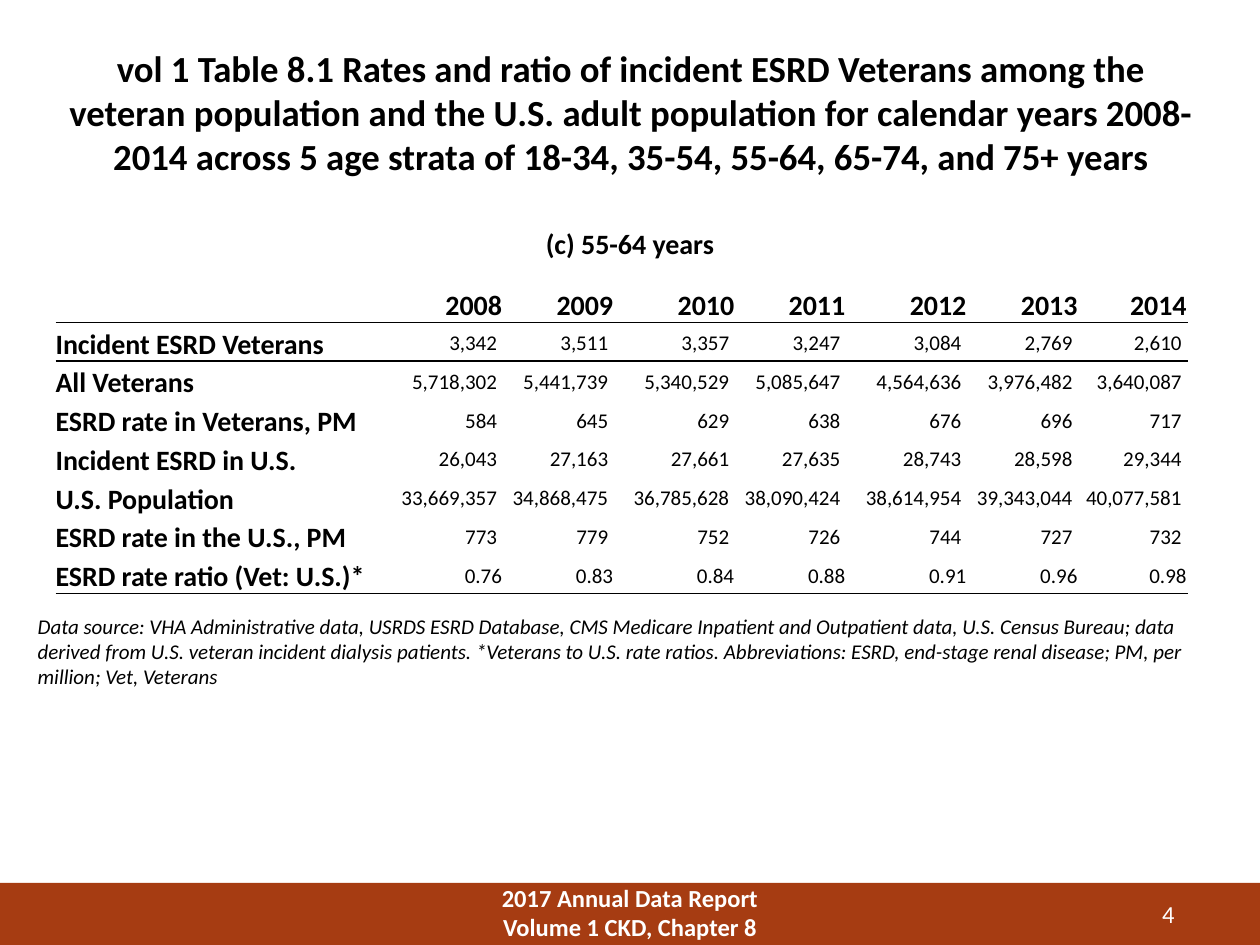
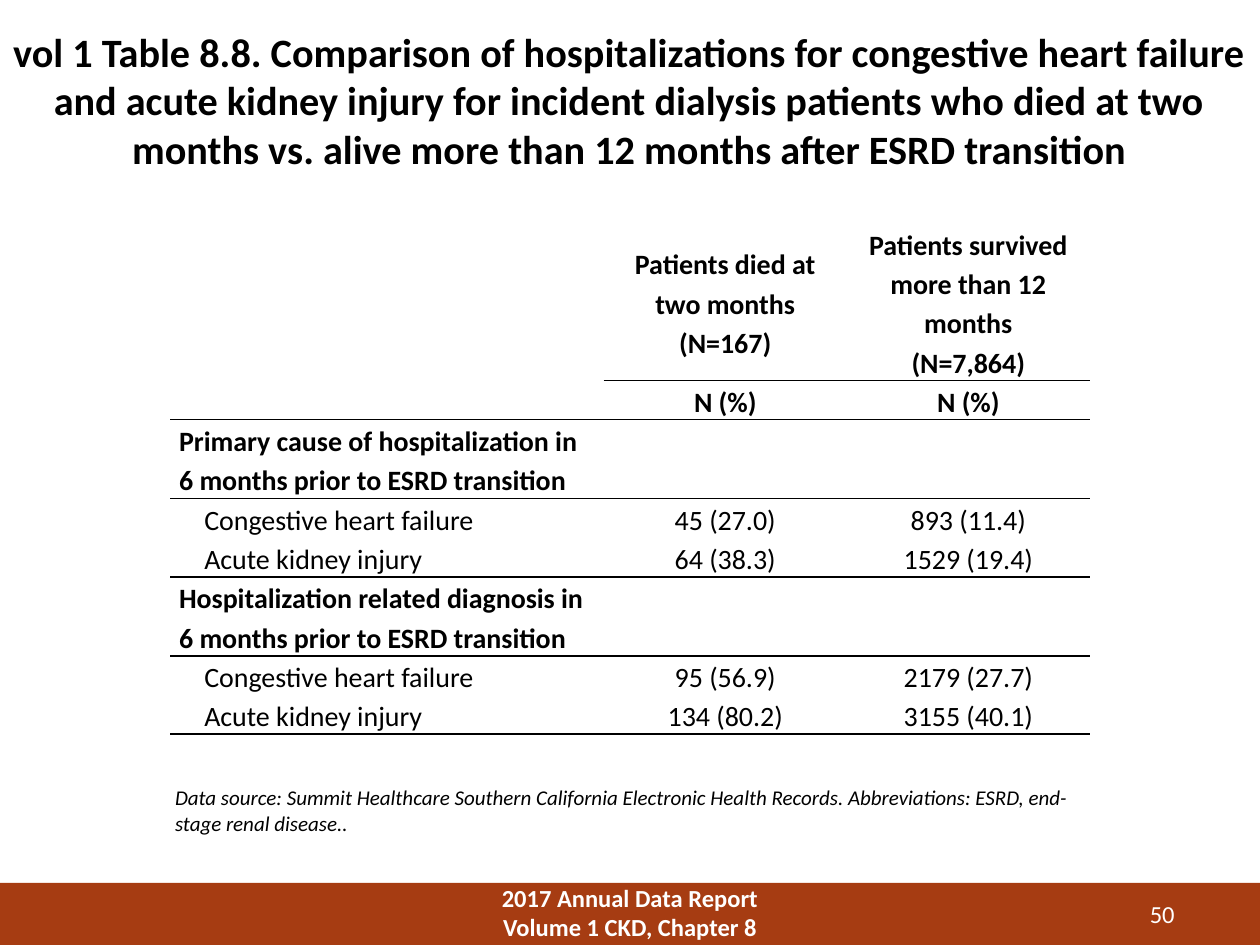
from lxml import etree
from pptx import Presentation
from pptx.dml.color import RGBColor
from pptx.enum.shapes import MSO_SHAPE
from pptx.enum.text import MSO_ANCHOR, PP_ALIGN
from pptx.oxml.ns import qn
from pptx.util import Cm, Pt

LEFT, MID, RIGHT = PP_ALIGN.LEFT, PP_ALIGN.CENTER, PP_ALIGN.RIGHT
TOP, CORE = MSO_ANCHOR.TOP, MSO_ANCHOR.MIDDLE
RECT = MSO_SHAPE.RECTANGLE
PLAIN = "{2D5ABB26-0587-4C30-8999-92F81FD0307C}"
INK, RUST, WHITE = "000000", "A63C12", "FFFFFF"

YEARS = "2008 2009 2010 2011 2012 2013 2014"
RATES = [
    ("", YEARS),
    ("Incident ESRD Veterans", "3,342 3,511 3,357 3,247 3,084 2,769 2,610"),
    ("All Veterans", "5,718,302 5,441,739 5,340,529 5,085,647 4,564,636 3,976,482 3,640,087"),
    ("ESRD rate in Veterans, PM", "584 645 629 638 676 696 717"),
    ("Incident ESRD in U.S.", "26,043 27,163 27,661 27,635 28,743 28,598 29,344"),
    ("U.S. Population",
     "33,669,357 34,868,475 36,785,628 38,090,424 38,614,954 39,343,044 40,077,581"),
    ("ESRD rate in the U.S., PM", "773 779 752 726 744 727 732"),
    ("ESRD rate ratio (Vet: U.S.)*", "0.76 0.83 0.84 0.88 0.91 0.96 0.98"),
]
HEART, KIDNEY = "Congestive heart failure", "Acute kidney injury"
STAYS = [
    ("", "Patients died at\vtwo months\n(N=167)",
     "Patients survived more than 12 months\n(N=7,864)"),
    ("", "N (%)", "N (%)"),
    ("Primary cause of hospitalization in 6 months prior to ESRD transition", "", ""),
    (HEART, "45 (27.0)", "893 (11.4)"),
    (KIDNEY, "64 (38.3)", "1529 (19.4)"),
    ("Hospitalization related diagnosis in 6 months prior to ESRD transition", "", ""),
    (HEART, "95 (56.9)", "2179 (27.7)"),
    (KIDNEY, "134 (80.2)", "3155 (40.1)"),
]


def tint(code):
    """Turn a hex string into a colour."""
    return RGBColor.from_string(code)


class Deck:
    """Hold the style and the current slide."""

    def __init__(self):
        """Start an empty 4:3 deck."""
        self.prs = Presentation()
        self.prs.slide_width, self.prs.slide_height = Cm(25.4), Cm(19.05)
        self.slide = None

    def style(self, frame, text, size, color=INK, bold=False, slant=False,
              align=LEFT, lead=None):
        """Fill a text frame in one uniform style."""
        frame.text = text
        for para in frame.paragraphs:
            para.alignment = align
            if lead:
                para.line_spacing = lead
            font = para.font
            font.name, font.size = "Calibri", Pt(size)
            font.bold, font.italic = bold, slant
            font.color.rgb = tint(color)

    def text(self, box, text, size, anchor=TOP, wrap=True, **look):
        """Add a text box."""
        frame = self.slide.shapes.add_textbox(*map(Cm, box)).text_frame
        frame.word_wrap, frame.vertical_anchor = wrap, anchor
        self.style(frame, text, size, **look)

    def page(self, number, title, box, size):
        """Add a slide with its footer band, page number and title."""
        self.slide = self.prs.slides.add_slide(self.prs.slide_layouts[6])
        band = self.slide.shapes.add_shape(RECT, *map(Cm, (0, 17.8, 25.4, 1.25)))
        band.shadow.inherit = False
        band.fill.solid()
        band.fill.fore_color.rgb = tint(RUST)
        band.line.fill.background()
        self.text((9.1, 17.7, 7.2, 1.37), "2017 Annual Data Report\nVolume 1 CKD, Chapter 8",
                  14, CORE, color=WHITE, bold=True, align=MID)
        self.text((21.39, 18.03, 2.54, 0.76), str(number), 14, CORE, color=WHITE, align=RIGHT)
        self.text(box, title, size, bold=True, align=MID)

    def note(self, box, text):
        """Add a source note."""
        self.text(box, text, 12, slant=True)

    def grid(self, spot, cols, rows):
        """Add a bare table with given column widths and row heights."""
        size = sum(cols), sum(rows)
        frame = self.slide.shapes.add_table(len(rows), len(cols), *map(Cm, spot + size))
        table = frame.table
        table.first_row = table.horz_banding = False
        table._tbl.tblPr.find(qn("a:tableStyleId")).text = PLAIN
        for part, wide in zip(table.columns, cols):
            part.width = Cm(wide)
        for part, tall in zip(table.rows, rows):
            part.height = Cm(tall)
        return table

    def cell(self, cell, text, size, left=0, right=0, **look):
        """Fill one table cell."""
        cell.fill.background()
        cell.vertical_anchor = CORE
        cell.margin_left, cell.margin_right = Cm(left), Cm(right)
        cell.margin_top = cell.margin_bottom = 0
        self.style(cell.text_frame, text, size, lead=1.15, **look)

    def edge(self, cell, tag):
        """Draw one border of a cell."""
        props = cell._tc.get_or_add_tcPr()
        line = etree.Element(qn(tag), w=str(Pt(1)))
        fill = etree.SubElement(line, qn("a:solidFill"))
        etree.SubElement(fill, qn("a:srgbClr"), val=INK)
        props.insert(len(props.findall(qn("a:lnT"))), line)

    def rule(self, table, row, first=0):
        """Draw a line under a row, from a first column on."""
        for col in range(first, len(table.columns)):
            self.edge(table.cell(row, col), "a:lnB")
            if row + 1 < len(table.rows):
                self.edge(table.cell(row + 1, col), "a:lnT")


def rates(deck):
    """Build the slide of yearly rates."""
    deck.page(4, "vol 1 Table 8.1 Rates and ratio of incident ESRD Veterans among the veteran "
              "population and the U.S. adult population for calendar years 2008-2014 across "
              "5 age strata of 18-34, 35-54, 55-64, 65-74, and 75+ years",
              (0.97, 0.79, 23.5, 3.15), 21)
    deck.text((10.72, 4.45, 3.96, 0.94), "(c) 55-64 years", 16, wrap=False, bold=True, align=MID)
    deck.note((0.51, 12.24, 24.03, 1.8),
              "Data source: VHA Administrative data, USRDS ESRD Database, CMS Medicare Inpatient "
              "and Outpatient data, U.S. Census Bureau; data derived from U.S. veteran incident "
              "dialysis patients. *Veterans to U.S. rate ratios. Abbreviations: ESRD, end-stage "
              "renal disease; PM, per million; Vet, Veterans")
    cols = (6.38, 2.64, 2.24, 2.44, 2.24, 2.44, 2.24, 2.2)
    table = deck.grid((1.12, 5.72), cols, [0.78] * len(RATES))
    last = len(RATES) - 1
    for row, (label, values) in enumerate(RATES):
        deck.cell(table.cell(row, 0), label, 16, bold=True)
        head = row == 0
        for col, value in enumerate(values.split(), 1):
            deck.cell(table.cell(row, col), value, 16 if head else 12, bold=head,
                      right=0.02 if row in (0, last) else 0.12, align=RIGHT)
    for row in (0, last):
        deck.rule(table, row)


def stays(deck):
    """Build the slide of hospital stays."""
    deck.page(50, "vol 1 Table 8.8. Comparison of hospitalizations for congestive heart failure "
              "and acute kidney injury for incident dialysis patients who died at two months "
              "vs. alive more than 12 months after ESRD transition", (0, 0.43, 25.4, 3.25), 23)
    rows = (3.17, 0.79, 1.59, 0.79, 0.79, 1.59, 0.79, 0.79)
    table = deck.grid((3.43, 4.5), (8.74, 4.9, 4.9), rows)
    for row, (label, *values) in enumerate(STAYS):
        group = not any(values)
        deck.cell(table.cell(row, 0), label, 16, left=0.18 if group else 0.69,
                  right=0.18, bold=group)
        for col, value in enumerate(values, 1):
            deck.cell(table.cell(row, col), value, 16, left=0.18, right=0.18,
                      bold=row < 2, align=MID)
        if group:
            table.cell(row, 1).merge(table.cell(row, 2))
    for row, first in ((0, 1), (1, 0), (4, 0), (7, 0)):
        deck.rule(table, row, first)
    deck.note((3.28, 15.7, 19.35, 1.27),
              "Data source: Summit Healthcare Southern California Electronic Health Records. "
              "Abbreviations: ESRD, end-stage renal disease..")


def main():
    """Build and save the deck."""
    deck = Deck()
    rates(deck)
    stays(deck)
    deck.prs.save("out.pptx")


if __name__ == "__main__":
    main()
